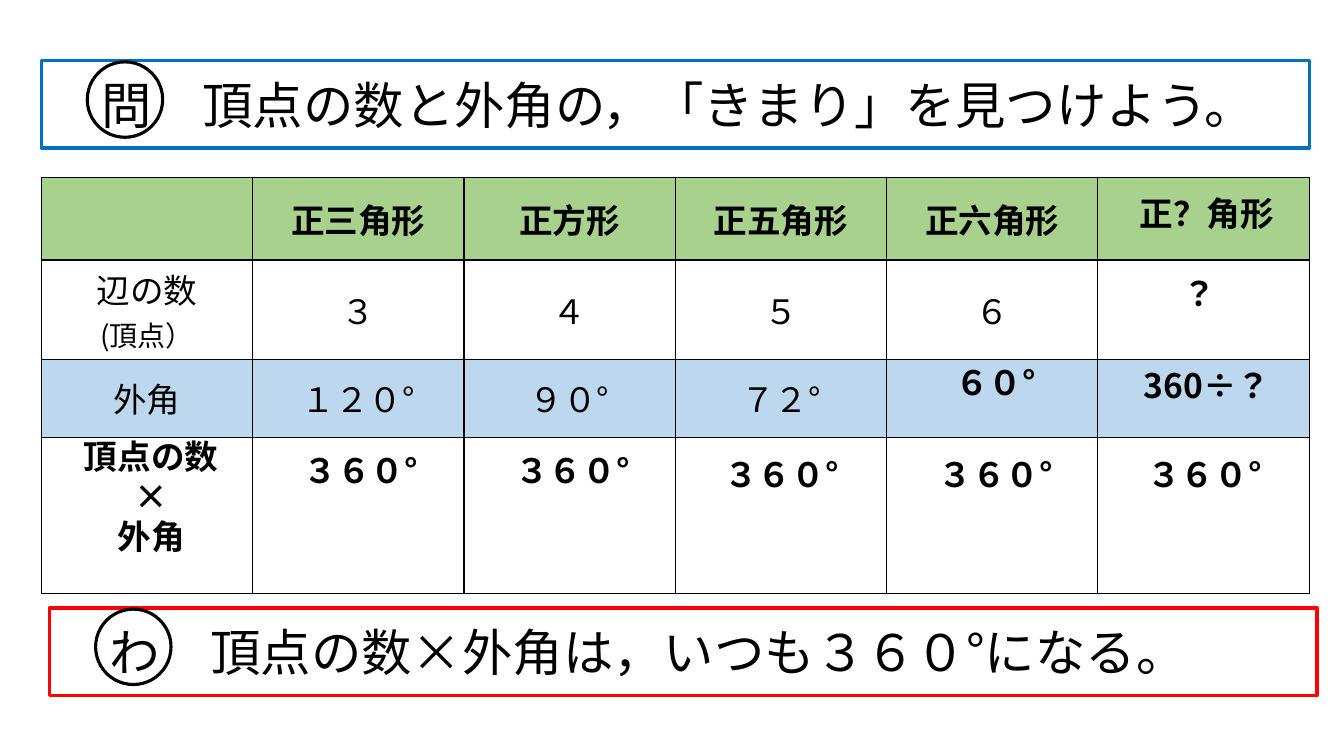
from pptx import Presentation
from pptx.dml.color import RGBColor
from pptx.enum.shapes import MSO_SHAPE
from pptx.enum.text import MSO_ANCHOR, MSO_AUTO_SIZE, PP_ALIGN
from pptx.oxml import parse_xml
from pptx.oxml.ns import nsdecls
from pptx.util import Cm, Pt

FONT = "Noto Sans CJK JP"
BLACK, WHITE, BLUE, RED = "000000", "FFFFFF", "0070C0", "FF0000"
GREEN, PALE_BLUE = "A9D18E", "BDD7EE"

ROWS = [
    ["", "正三角形", "正方形", "正五角形", "正六角形", ""],
    ["辺の数\n(頂点）", "３", "４", "５", "６", ""],
    ["外角", "１２０°", "９０°", "７２°", "", ""],
    [""] * 6,
]
ROW_FILLS = [GREEN, WHITE, PALE_BLUE, WHITE]
ROW_HEIGHTS = [2.08, 2.5, 1.96, 3.94]
COL_WIDTH = 5.325

# Answers laid over the table: text, left, top, width (cm)
ANSWERS = [
    ("３６０°", 6.4, 11.22, 5.38),
    ("３６０°", 11.79, 11.22, 5.27),
    ("３６０°", 17.06, 11.31, 5.27),
    ("３６０°", 22.4, 11.31, 5.38),
    ("３６０°", 27.72, 11.31, 5.27),
    ("６０°", 22.4, 8.99, 5.38),
    ("頂点の数\n×\n外角", 1.12, 10.85, 5.38),
    ("正？角形", 27.78, 4.73, 5.27),
    ("？", 27.58, 6.75, 5.27),
    ("360÷？", 27.78, 9.08, 5.27),
]


def rgb(color):
    return RGBColor.from_string(color)


def format_text(tf, size, bold=False, align=PP_ALIGN.CENTER):
    for p in tf.paragraphs:
        p.alignment = align
        for r in p.runs:
            r.font.size, r.font.bold, r.font.name = Pt(size), bold, FONT
            r.font.color.rgb = rgb(BLACK)
            r._r.get_or_add_rPr().append(
                parse_xml(f'<a:ea {nsdecls("a")} typeface="{FONT}"/>'))


def set_outline(sp, color):
    sp.fill.background()
    sp.line.color.rgb = rgb(color)
    sp.line.width = Pt(2.25)


def format_banner(sp, text, color):
    set_outline(sp, color)
    tf = sp.text_frame
    tf.text = text
    tf.word_wrap = True
    tf.auto_size = MSO_AUTO_SIZE.NONE
    tf.vertical_anchor = MSO_ANCHOR.MIDDLE
    format_text(tf, 36, align=PP_ALIGN.LEFT)


def add_outlined(shapes, kind, left, top, width, height, color):
    sp = shapes.add_shape(kind, Cm(left), Cm(top), Cm(width), Cm(height))
    sp.shadow.inherit = False
    set_outline(sp, color)
    return sp


def add_circle(shapes, left, top):
    add_outlined(shapes, MSO_SHAPE.OVAL, left, top, 1.9, 1.9, BLACK)


def add_borders(cell):
    tc_pr = cell._tc.get_or_add_tcPr()
    for i, side in enumerate(("lnL", "lnR", "lnT", "lnB")):
        tc_pr.insert(i, parse_xml(
            f'<a:{side} {nsdecls("a")} w="12700"><a:solidFill>'
            f'<a:srgbClr val="{BLACK}"/></a:solidFill></a:{side}>'))


def add_polygon_table(s):
    frame = s.shapes.add_table(len(ROWS), len(ROWS[0]), Cm(1.04), Cm(4.47),
                               Cm(COL_WIDTH * 6), Cm(sum(ROW_HEIGHTS)))
    table = frame.table
    for col in table.columns:
        col.width = Cm(COL_WIDTH)
    for i, texts in enumerate(ROWS):
        table.rows[i].height = Cm(ROW_HEIGHTS[i])
        for j, text in enumerate(texts):
            cell = table.cell(i, j)
            cell.text = text
            cell.vertical_anchor = MSO_ANCHOR.MIDDLE
            cell.fill.solid()
            cell.fill.fore_color.rgb = rgb(ROW_FILLS[i])
            add_borders(cell)
            format_text(cell.text_frame, 24, bold=i == 0)
    # The note under the row label is smaller
    table.cell(1, 0).text_frame.paragraphs[1].runs[0].font.size = Pt(20)


def add_answer(s, text, left, top, width):
    height = 4.11 if "\n" in text else 1.27
    tf = s.shapes.add_textbox(Cm(left), Cm(top), Cm(width), Cm(height)).text_frame
    tf.text = text
    tf.word_wrap = True
    tf.auto_size = MSO_AUTO_SIZE.SHAPE_TO_FIT_TEXT
    format_text(tf, 24, bold=True)


def main():
    prs = Presentation()
    prs.slide_width, prs.slide_height = Cm(33.867), Cm(19.05)
    s = prs.slides.add_slide(prs.slide_layouts[5])

    # Question
    title = s.shapes.title
    title.left, title.top, title.width, title.height = Cm(1.04), Cm(1.52), Cm(31.95), Cm(2.21)
    format_banner(title, "　問　頂点の数と外角の，「きまり」を見つけよう。", BLUE)
    add_circle(s.shapes, 2.2, 1.56)

    # Table and its answers
    add_polygon_table(s)
    for answer in ANSWERS:
        add_answer(s, *answer)

    # Conclusion
    group = s.shapes.add_group_shape()
    banner = add_outlined(group.shapes, MSO_SHAPE.RECTANGLE, 1.24, 15.32, 31.95, 2.21, RED)
    format_banner(banner, "　わ　頂点の数×外角は，いつも３６０°になる。", RED)
    add_circle(group.shapes, 2.41, 15.35)

    prs.save("out.pptx")


if __name__ == "__main__":
    main()
